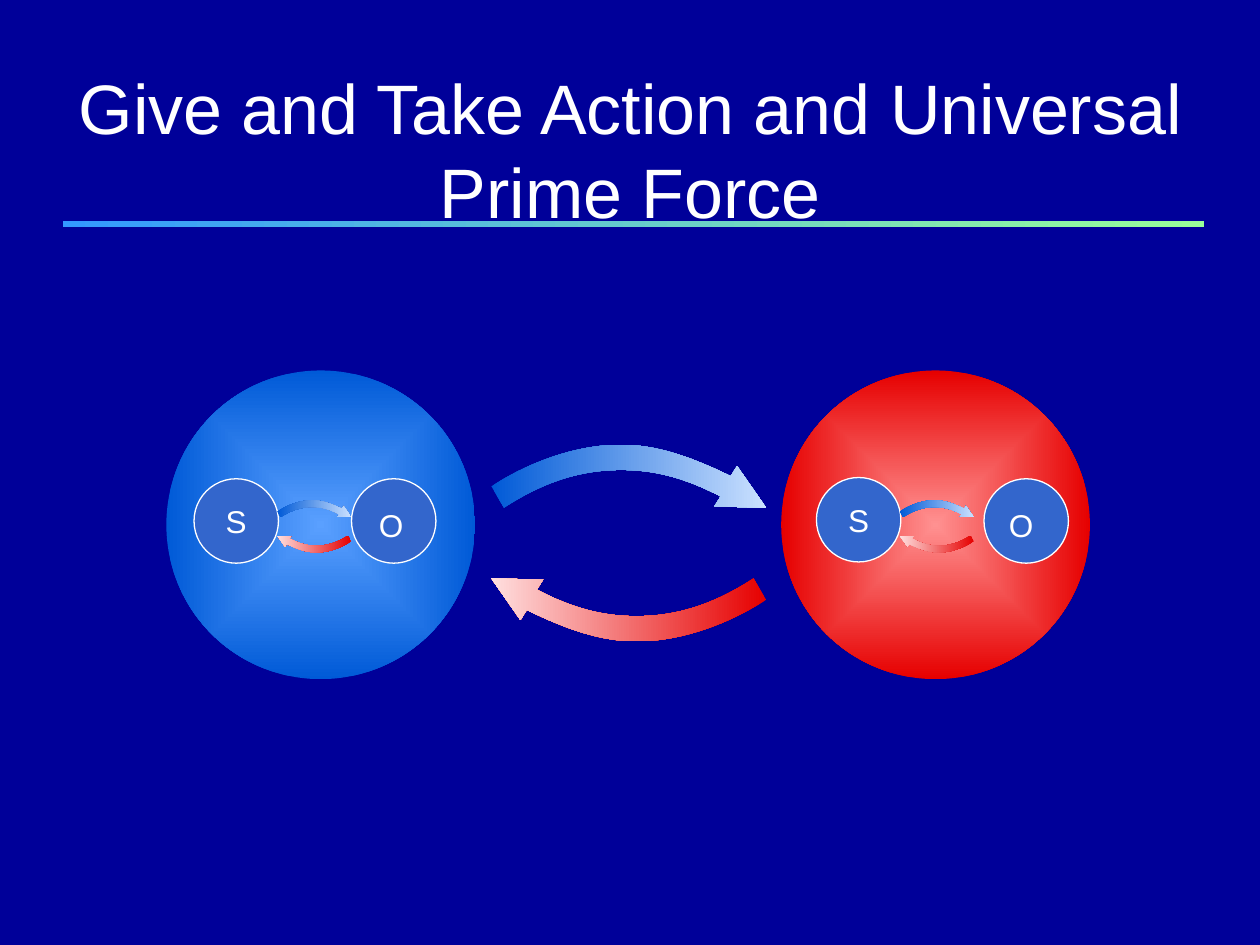
import lxml.etree
import pptx
import pptx.dml.color
import pptx.enum.shapes
import pptx.enum.text
import pptx.oxml.ns
import pptx.util

Inches = pptx.util.Inches
Pt = pptx.util.Pt
qualified = pptx.oxml.ns.qn
OVAL = pptx.enum.shapes.MSO_SHAPE.OVAL
RECTANGLE = pptx.enum.shapes.MSO_SHAPE.RECTANGLE
CENTER = pptx.enum.text.PP_ALIGN.CENTER
MIDDLE = pptx.enum.text.MSO_ANCHOR.MIDDLE

TITLE = "Give and Take Action and Universal Prime Force"
NAVY, WHITE, CIRCLE_BLUE = "000099", "FFFFFF", "3366CC"
RULE_COLORS = ("3399FF", "99FF99")
GIVE_COLORS = ("005AD7", "CBE1FF")
TAKE_COLORS = ("E60000", "FFDFDF")

SPHERE_SIZE, SPHERE_TOP = 2.45, 2.94
SPHERES = [(1.32, ("5AA0FF", "005AD7")), (6.2, ("FF9191", "E60000"))]
CIRCLE_SIZE = 0.67
CIRCLES = [("S", 1.54, 3.8), ("", 2.79, 3.8), ("S", 6.48, 3.79), ("", 7.81, 3.8)]
OBJECT_LABELS = [2.91, 7.91]
LABEL_TOP = 3.97

LARGE_ARROWS = (3.9, 3.53, 4.59, 1)
SMALL_ARROWS = [(7.14, 3.97, 4.25, 0.27), (2.2, 3.97, 4.25, 0.27)]
ARROW_START = (0, 0.33)
ARROW_SEGMENTS = [
    [(0.33, 0.12), (0.7, 0), (1.03, 0)],
    [(1.36, 0), (1.67, 0.14), (1.9, 0.25)],
    [(1.95, 0.17)],
    [(2.18, 0.5)],
    [(1.77, 0.49)],
    [(1.82, 0.41)],
    [(1.55, 0.27), (1.31, 0.2), (1.03, 0.2)],
    [(0.75, 0.2), (0.45, 0.27), (0.1, 0.5)],
]


def color(value):
    return pptx.dml.color.RGBColor.from_string(value)


def fill_gradient(shape, colors, radial=False):
    shape.fill.gradient()
    shape.fill.gradient_angle = 0
    for stop, value in zip(shape.fill.gradient_stops, colors):
        stop.color.rgb = color(value)
    if radial:
        linear = next(shape._element.spPr.iter(qualified("a:lin")))
        radial_path = lxml.etree.Element(qualified("a:path"), path="shape")
        sides = dict.fromkeys("ltrb", "50000")
        lxml.etree.SubElement(radial_path, qualified("a:fillToRect"), sides)
        linear.getparent().replace(linear, radial_path)
    shape.line.fill.background()
    shape.shadow.inherit = False


def format_text(text_frame, size):
    for paragraph in text_frame.paragraphs:
        for run in paragraph.runs:
            run.font.name = "Arial"
            run.font.size = Pt(size)
            run.font.color.rgb = color(WHITE)


def add_shape(slide, kind, left, top, width, height):
    return slide.shapes.add_shape(
        kind, Inches(left), Inches(top), Inches(width), Inches(height)
    )


def bend_segments(arrow, scale):
    lines = list(arrow._element.spPr.iter(qualified("a:lnTo")))
    for line, segment in zip(lines, ARROW_SEGMENTS):
        if len(segment) == 3:
            curve = lxml.etree.Element(qualified("a:cubicBezTo"))
            for x, y in segment:
                position = {"x": str(Inches(x * scale)), "y": str(Inches(y * scale))}
                lxml.etree.SubElement(curve, qualified("a:pt"), position)
            line.getparent().replace(line, curve)


def add_arrow(shapes, left, top, scale, colors, rotation):
    corners = [ARROW_START] + [segment[-1] for segment in ARROW_SEGMENTS]
    points = [
        (Inches(left + x * scale), Inches(top + y * scale)) for x, y in corners
    ]
    builder = shapes.build_freeform(*points[0])
    builder.add_line_segments(points[1:], close=True)
    arrow = builder.convert_to_shape()
    bend_segments(arrow, scale)
    arrow.rotation = rotation
    fill_gradient(arrow, colors)


def add_arrow_pair(slide, left, give_top, take_top, scale):
    group = slide.shapes.add_group_shape()
    add_arrow(group.shapes, left, give_top, scale, GIVE_COLORS, 0)
    add_arrow(group.shapes, left, take_top, scale, TAKE_COLORS, 180)


def add_title(slide):
    title = slide.shapes.title
    title.left, title.top = Inches(0), Inches(0.58)
    title.width, title.height = Inches(10), Inches(1.19)
    text_frame = title.text_frame
    text_frame.text = TITLE
    text_frame.auto_size = pptx.enum.text.MSO_AUTO_SIZE.NONE
    text_frame.vertical_anchor = MIDDLE
    text_frame.paragraphs[0].alignment = CENTER
    format_text(text_frame, 40)


def add_circle(slide, label, left, top):
    circle = add_shape(slide, OVAL, left, top, CIRCLE_SIZE, CIRCLE_SIZE)
    circle.shadow.inherit = False
    circle.fill.solid()
    circle.fill.fore_color.rgb = color(CIRCLE_BLUE)
    circle.line.color.rgb = color(WHITE)
    circle.line.width = Pt(0.75)
    if label:
        text_frame = circle.text_frame
        text_frame.text = label
        text_frame.word_wrap = False
        text_frame.vertical_anchor = MIDDLE
        text_frame.paragraphs[0].alignment = CENTER
        format_text(text_frame, 18)


def add_object_label(slide, left):
    box = slide.shapes.add_textbox(
        Inches(left), Inches(LABEL_TOP), Inches(0.2), Inches(0.4)
    )
    text_frame = box.text_frame
    text_frame.text = "O"
    text_frame.word_wrap = True
    text_frame.margin_right = 0
    format_text(text_frame, 18)


def main():
    presentation = pptx.Presentation()
    presentation.slide_width = Inches(10)
    presentation.slide_height = Inches(7.5)
    slide = presentation.slides.add_slide(presentation.slide_layouts[5])
    slide.background.fill.solid()
    slide.background.fill.fore_color.rgb = color(NAVY)

    add_title(slide)
    add_arrow_pair(slide, *LARGE_ARROWS)
    for left, colors in SPHERES:
        sphere = add_shape(slide, OVAL, left, SPHERE_TOP, SPHERE_SIZE, SPHERE_SIZE)
        fill_gradient(sphere, colors, radial=True)
    rule = add_shape(slide, RECTANGLE, 0.5, 1.75, 9.06, 0.05)
    fill_gradient(rule, RULE_COLORS)
    for circle in CIRCLES:
        add_circle(slide, *circle)
    for arrows in SMALL_ARROWS:
        add_arrow_pair(slide, *arrows)
    for left in OBJECT_LABELS:
        add_object_label(slide, left)
    presentation.save("out.pptx")


if __name__ == "__main__":
    main()
